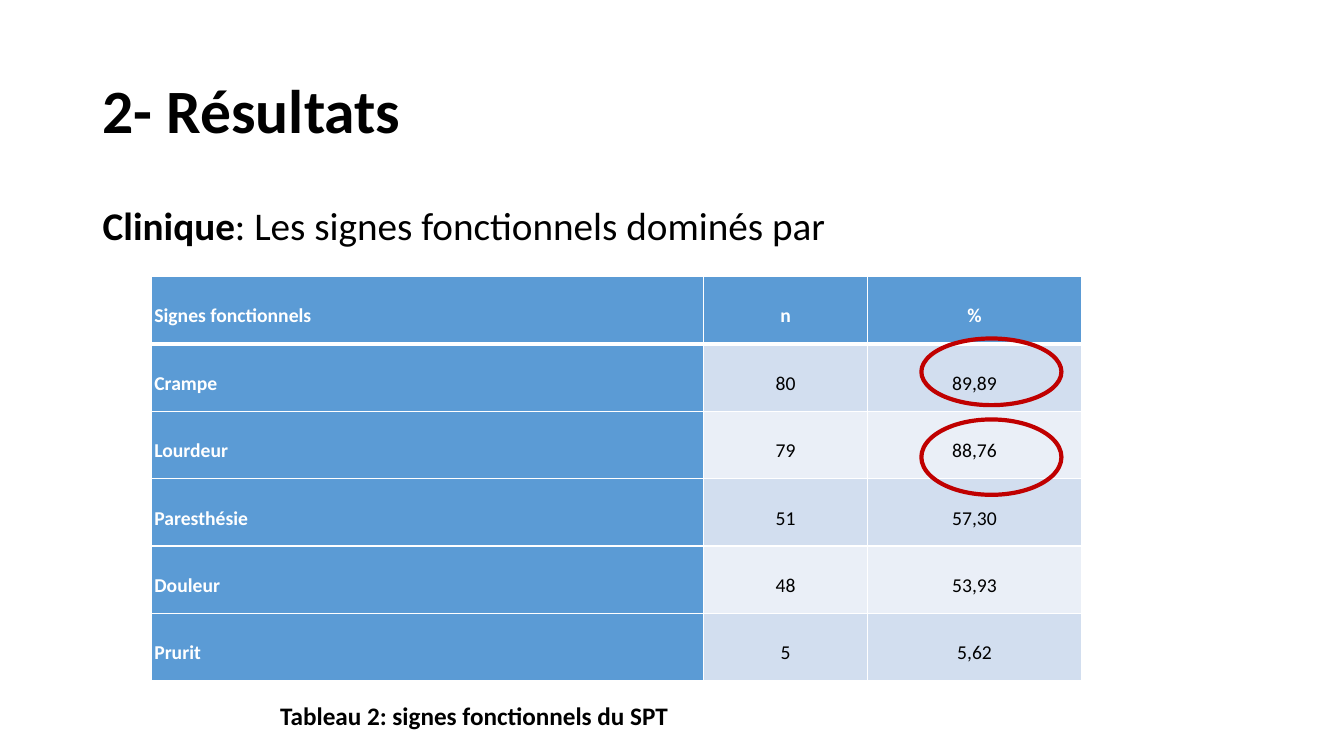
from dataclasses import dataclass

from lxml import etree
from pptx import Presentation
from pptx.dml.color import RGBColor
from pptx.enum.shapes import MSO_SHAPE
from pptx.enum.text import MSO_ANCHOR, PP_ALIGN
from pptx.oxml.ns import qn
from pptx.util import Cm, Pt

ELLIPSE = MSO_SHAPE.OVAL
MIDDLE, TOP = MSO_ANCHOR.MIDDLE, MSO_ANCHOR.TOP
LEFT, CENTER = PP_ALIGN.LEFT, PP_ALIGN.CENTER

FONT = "Calibri"
BLACK, WHITE, RED = "000000", "FFFFFF", "C00000"
BLUE, BAND_DARK, BAND_LIGHT = "5B9BD5", "D2DEEF", "EAEFF7"

COLUMN_WIDTHS = (13.92, 4.14, 5.38)
ROW_HEIGHT = 1.7
ROWS = (
    ("Signes fonctionnels", "n", "%"),
    ("Crampe", "80", "89,89"),
    ("Lourdeur", "79", "88,76"),
    ("Paresthésie", "51", "57,30"),
    ("Douleur", "48", "53,93"),
    ("Prurit", "5", "5,62"),
)


@dataclass(frozen=True)
class Area:
    """A rectangle on the page, in centimetres."""
    left: float
    top: float
    width: float
    height: float

    def lengths(self) -> tuple:
        return Cm(self.left), Cm(self.top), Cm(self.width), Cm(self.height)


@dataclass(frozen=True)
class Span:
    text: str
    bold: bool = True


@dataclass(frozen=True)
class TextBlock:
    area: Area
    spans: tuple[Span, ...]
    size: float
    anchor: MSO_ANCHOR = TOP
    line_spacing: float = 1.0
    space_before: float = 0


TEXT_BLOCKS = (
    TextBlock(Area(2.34, 1.02, 29.21, 3.68), (Span("2- Résultats"),), 44,
              anchor=MIDDLE, line_spacing=0.9),
    TextBlock(Area(2.34, 5.08, 29.21, 12.09),
              (Span("Clinique"), Span(": Les signes fonctionnels dominés par", False)),
              28, line_spacing=0.9, space_before=10),
    TextBlock(Area(6.81, 17.53, 18.59, 1.02),
              (Span("Tableau 2: signes fonctionnels du SPT"),), 18),
)
TABLE_AREA = Area(3.81, 6.96, sum(COLUMN_WIDTHS), ROW_HEIGHT * len(ROWS))
HIGHLIGHTS = (Area(23.22, 8.53, 3.53, 1.68), Area(23.22, 10.57, 3.53, 1.9))


def color(value: str) -> RGBColor:
    return RGBColor.from_string(value)


def write(para, text: str, *, size: float, bold: bool = False, ink: str = BLACK,
          align: PP_ALIGN = LEFT, line_spacing: float = 1.0,
          space_before: float = 0) -> None:
    """Append one formatted span to a paragraph."""
    para.alignment = align
    para.line_spacing = line_spacing
    para.space_before = Pt(space_before)
    span = para.add_run()
    span.text = text
    span.font.name = FONT
    span.font.size = Pt(size)
    span.font.bold = bold
    span.font.color.rgb = color(ink)


def add_text(page, block: TextBlock) -> None:
    frame = page.shapes.add_textbox(*block.area.lengths()).text_frame
    frame.word_wrap = True
    frame.vertical_anchor = block.anchor
    for span in block.spans:
        write(frame.paragraphs[0], span.text, size=block.size, bold=span.bold,
              line_spacing=block.line_spacing, space_before=block.space_before)


def set_borders(cell, widths: dict[str, float]) -> None:
    """Draw white borders; they must precede the fill in the cell properties."""
    properties = cell._tc.get_or_add_tcPr()
    for position, (side, width) in enumerate(widths.items()):
        line = etree.Element(qn(f"a:{side}"), w=str(Pt(width)))
        fill = etree.SubElement(line, qn("a:solidFill"))
        etree.SubElement(fill, qn("a:srgbClr"), val=WHITE)
        properties.insert(position, line)


def add_table(page) -> None:
    table = page.shapes.add_table(len(ROWS), len(COLUMN_WIDTHS),
                                  *TABLE_AREA.lengths()).table
    for column, width in zip(table.columns, COLUMN_WIDTHS):
        column.width = Cm(width)
    for row_index, values in enumerate(ROWS):
        table.rows[row_index].height = Cm(ROW_HEIGHT)
        for column_index, value in enumerate(values):
            cell = table.cell(row_index, column_index)
            heading = row_index == 0 or column_index == 0
            band = BAND_DARK if row_index % 2 else BAND_LIGHT
            cell.fill.solid()
            cell.fill.fore_color.rgb = color(BLUE if heading else band)
            cell.vertical_anchor = MIDDLE
            cell.margin_left = cell.margin_right = Cm(0.08)
            cell.margin_top = cell.margin_bottom = Cm(0.05)
            set_borders(cell, {"lnL": 1, "lnR": 1,
                               "lnT": 3 if row_index == 1 else 1,
                               "lnB": 3 if row_index == 0 else 1})
            write(cell.text_frame.paragraphs[0], value, size=14, bold=heading,
                  ink=WHITE if heading else BLACK,
                  align=CENTER if column_index else LEFT, line_spacing=1.5)


def add_highlight(page, area: Area) -> None:
    ring = page.shapes.add_shape(ELLIPSE, *area.lengths())
    ring.shadow.inherit = False
    ring.fill.background()
    ring.line.color.rgb = color(RED)
    ring.line.width = Pt(3)


def main() -> None:
    deck = Presentation()
    deck.slide_width, deck.slide_height = Cm(33.87), Cm(19.05)
    page = deck.slides.add_slide(deck.slide_layouts[6])

    # Title, lead sentence and caption
    for block in TEXT_BLOCKS:
        add_text(page, block)

    # Table of signs, with the two leading rates circled
    add_table(page)
    for area in HIGHLIGHTS:
        add_highlight(page, area)

    deck.save("out.pptx")


if __name__ == "__main__":
    main()
